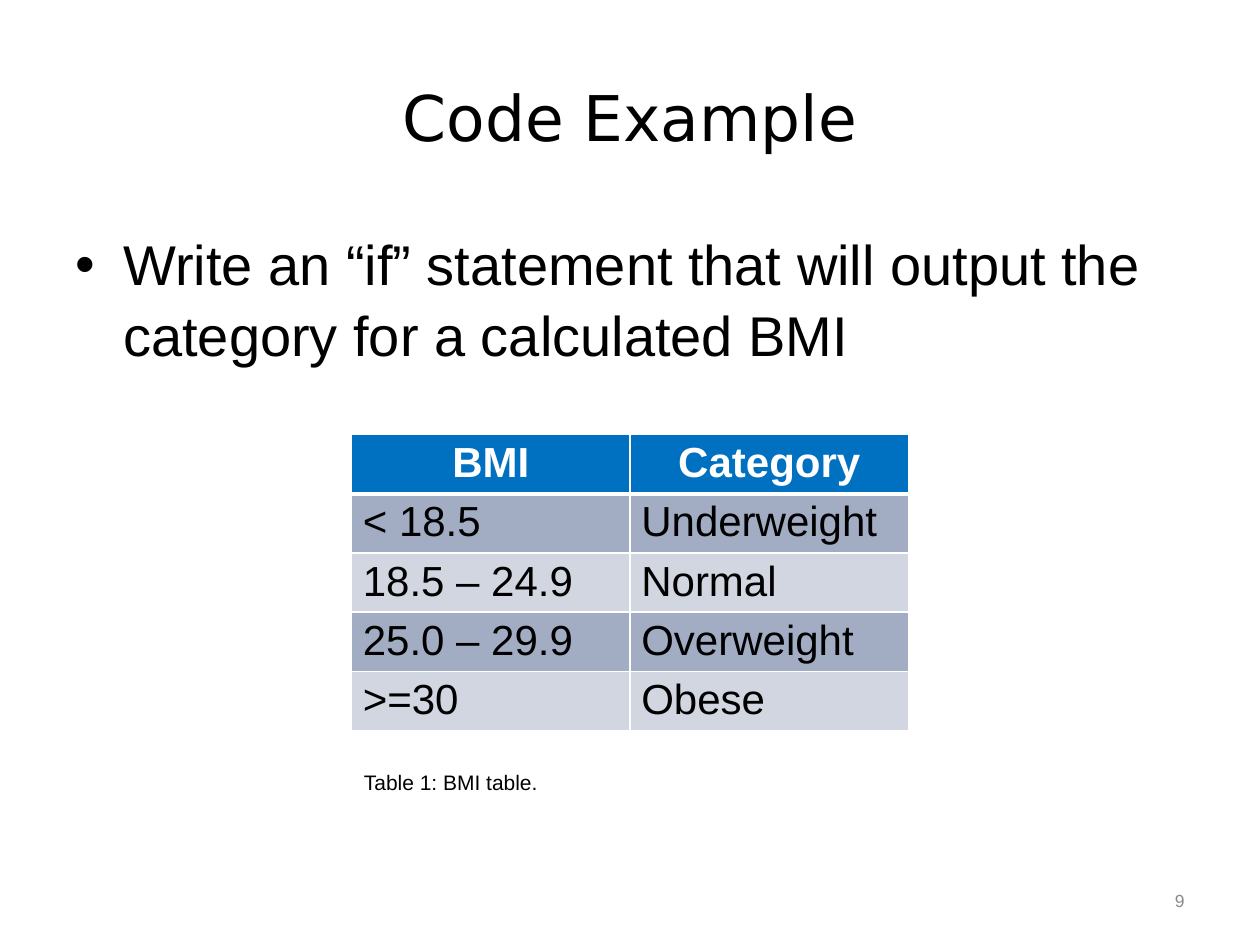
from pptx import Presentation
from pptx.dml.color import RGBColor
from pptx.enum import text
from pptx.oxml import parse_xml
from pptx.oxml.ns import nsdecls
from pptx.util import Inches, Pt

COLORS = {"ink": "000000", "white": "FFFFFF", "header": "0070C0",
          "band_dark": "A2ADC4", "band_light": "D1D6E1", "number": "898989"}
BMI_ROWS = [("BMI", "Category"), ("< 18.5", "Underweight"), ("18.5 – 24.9", "Normal"),
            ("25.0 – 29.9", "Overweight"), (">=30", "Obese")]
LEFT, CENTER, RIGHT = (text.PP_ALIGN.LEFT, text.PP_ALIGN.CENTER, text.PP_ALIGN.RIGHT)
TOP, MIDDLE = text.MSO_ANCHOR.TOP, text.MSO_ANCHOR.MIDDLE


def write(tf, words, size, color="ink", align=LEFT, name="Arial", bold=False):
    """Put one formatted paragraph in a text frame and return it."""
    p = tf.paragraphs[0]
    p.alignment = align
    r = p.add_run()
    r.text = words
    for key, value in {"size": Pt(size), "name": name, "bold": bold}.items():
        setattr(r.font, key, value)
    r.font.color.rgb = RGBColor.from_string(COLORS[color])
    return p


def place(sp, box, anchor):
    sp.left, sp.top, sp.width, sp.height = [Inches(v) for v in box]
    tf = sp.text_frame
    for key, value in {"word_wrap": True, "auto_size": text.MSO_AUTO_SIZE.NONE,
                       "vertical_anchor": anchor}.items():
        setattr(tf, key, value)
    return tf


def add_text(s, box, words, size, anchor=TOP, **style):
    sp = s.shapes.add_textbox(0, 0, 0, 0)
    return write(place(sp, box, anchor), words, size, **style)


def set_bullet(p, indent):
    pPr = p._p.get_or_add_pPr()
    pPr.set("marL", str(Inches(indent)))
    pPr.set("indent", str(-Inches(indent)))
    pPr.append(parse_xml(f'<a:buFont {nsdecls("a")} typeface="Arial"/>'))
    pPr.append(parse_xml(f'<a:buChar {nsdecls("a")} char="•"/>'))


def set_borders(cell, widths):
    tcPr = cell._tc.get_or_add_tcPr()
    for i, (side, width) in enumerate(widths.items()):
        tcPr.insert(i, parse_xml(
            f'<a:{side} {nsdecls("a")} w="{Pt(width)}"><a:solidFill>'
            f'<a:srgbClr val="{COLORS["white"]}"/></a:solidFill></a:{side}>'))


def add_bmi_table(s, left, top, col_width, row_height):
    rows, cols = len(BMI_ROWS), len(BMI_ROWS[0])
    table = s.shapes.add_table(rows, cols, Inches(left), Inches(top),
                               Inches(col_width * cols), Inches(row_height * rows)).table
    for i, values in enumerate(BMI_ROWS):
        head = i == 0
        fill = "header" if head else "band_dark" if i % 2 else "band_light"
        for j, words in enumerate(values):
            cell = table.cell(i, j)
            cell.margin_left = cell.margin_right = Inches(0.09)
            cell.margin_top = cell.margin_bottom = Inches(0.04)
            cell.fill.solid()
            cell.fill.fore_color.rgb = RGBColor.from_string(COLORS[fill])
            # A thick rule parts the header from the first row
            set_borders(cell, {"lnL": 1, "lnR": 1, "lnT": 3 if i == 1 else 1,
                               "lnB": 3 if head else 1})
            write(cell.text_frame, words, 24, color="white" if head else "ink",
                  align=CENTER if head else LEFT, bold=head)


def main():
    prs = Presentation()
    prs.slide_width, prs.slide_height = Inches(10), Inches(7.5)
    s = prs.slides.add_slide(prs.slide_layouts[5])

    # Title
    write(place(s.shapes.title, (0.5, 0.3, 9, 1.25), MIDDLE), "Code Example", 36,
          align=CENTER, name="DejaVu Sans")

    # Task
    p = add_text(s, (0.5, 1.75, 9, 1.5),
                 "Write an “if” statement that will output the category for a calculated BMI", 32)
    p.line_spacing = 1.05
    set_bullet(p, 0.38)

    # Table and its caption
    add_bmi_table(s, 2.79, 3.45, 2.21, 0.47)
    add_text(s, (2.79, 6.06, 3.76, 0.58), "Table 1: BMI table.", 12)

    # Slide number
    add_text(s, (8.94, 6.85, 0.56, 0.6), "9", 10, MIDDLE, color="number", align=RIGHT)

    prs.save("out.pptx")


if __name__ == "__main__":
    main()
